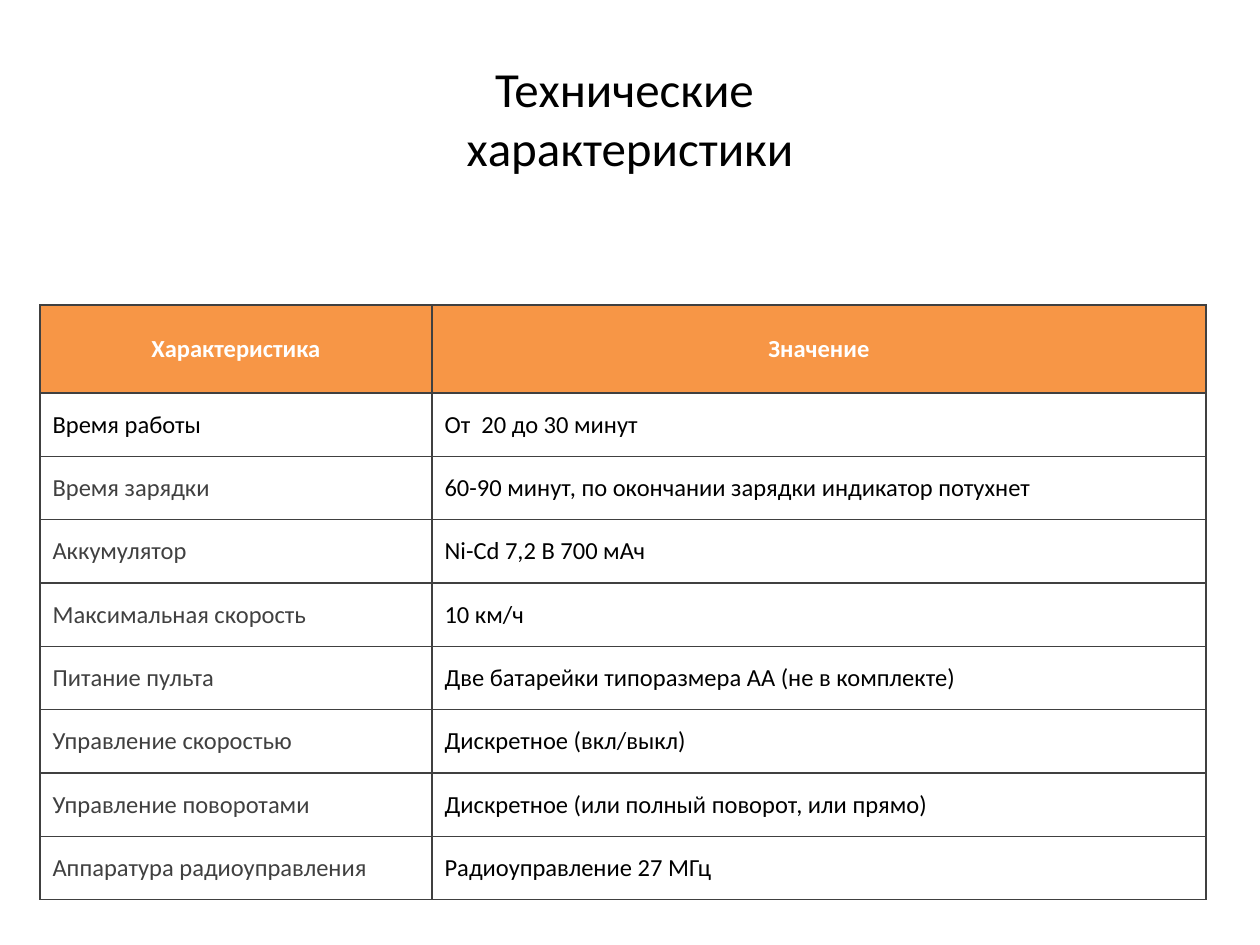
from dataclasses import dataclass

from lxml import etree
from pptx import Presentation
from pptx.dml.color import RGBColor
from pptx.enum.text import MSO_ANCHOR as ANCHOR, PP_ALIGN as ALIGN
from pptx.oxml.ns import qn
from pptx.util import Emu, Pt


@dataclass(frozen=True)
class Theme:
    """Colours, font and type sizes of the slide."""
    font: str = "Calibri"
    black: str = "000000"
    grey: str = "404040"
    white: str = "FFFFFF"
    orange: str = "F79646"
    title_size: int = 28
    table_size: int = 14
    border: int = 1


THEME = Theme()
HEADER = ("Характеристика", "Значение")
SPECS = (
    ("Время работы", "От  20 до 30 минут"),
    ("Время зарядки", "60-90 минут, по окончании зарядки индикатор потухнет"),
    ("Аккумулятор", "Ni-Cd 7,2 В 700 мАч"),
    ("Максимальная скорость", "10 км/ч"),
    ("Питание пульта", "Две батарейки типоразмера АА (не в комплекте)"),
    ("Управление скоростью", "Дискретное (вкл/выкл)"),
    ("Управление поворотами", "Дискретное (или полный поворот, или прямо)"),
    ("Аппаратура радиоуправления", "Радиоуправление 27 МГц"),
)


def px(n):
    """Convert pixels at 126 to the inch into EMU."""
    return Emu(round(n * 914400 / 126))


def write(tf, text, size, color, align=ALIGN.LEFT, bold=False):
    """Put one styled paragraph into a text frame."""
    p = tf.paragraphs[0]
    p.text = text
    p.alignment = align
    p.font.name = THEME.font
    p.font.size = Pt(size)
    p.font.bold = bold
    p.font.color.rgb = RGBColor.from_string(color)


def add_title(s, text, x, y, w, h):
    """Add the centred slide title."""
    tf = s.shapes.add_textbox(px(x), px(y), px(w), px(h)).text_frame
    tf.word_wrap = True
    tf.vertical_anchor = ANCHOR.MIDDLE
    write(tf, text, THEME.title_size, THEME.black, ALIGN.CENTER)


def add_borders(cell):
    """Draw a thin line on all four sides of a cell."""
    tc_pr = cell._tc.get_or_add_tcPr()
    for i, side in enumerate(("a:lnL", "a:lnR", "a:lnT", "a:lnB")):
        ln = etree.Element(qn(side), w=str(Pt(THEME.border)))
        fill = etree.SubElement(ln, qn("a:solidFill"))
        etree.SubElement(fill, qn("a:srgbClr"), val=THEME.grey)
        tc_pr.insert(i, ln)


def fill_cell(cell, text, fill, color, **style):
    """Fill, frame and label one table cell."""
    cell.fill.solid()
    cell.fill.fore_color.rgb = RGBColor.from_string(fill)
    cell.vertical_anchor = ANCHOR.MIDDLE
    write(cell.text_frame, text, THEME.table_size, color, **style)
    add_borders(cell)


def add_specs(s, x, y, widths, head_h, body_h):
    """Add the table with a header row and equal body rows."""
    table = s.shapes.add_table(len(SPECS) + 1, len(widths), px(x), px(y),
                               px(sum(widths)), px(head_h + body_h)).table
    for col, w in zip(table.columns, widths):
        col.width = px(w)
    for row in table.rows:
        row.height = px(body_h) // len(SPECS)
    table.rows[0].height = px(head_h)
    for c, text in enumerate(HEADER):
        fill_cell(table.cell(0, c), text, THEME.orange, THEME.white,
                  align=ALIGN.CENTER, bold=True)
    for r, (name, value) in enumerate(SPECS, 1):
        name_color = THEME.black if r == 1 else THEME.grey
        fill_cell(table.cell(r, 0), name, THEME.white, name_color)
        fill_cell(table.cell(r, 1), value, THEME.white, THEME.black)


def main():
    """Build and save the slide."""
    prs = Presentation()
    prs.slide_width, prs.slide_height = px(1260), px(945)
    s = prs.slides.add_slide(prs.slide_layouts[6])
    add_title(s, "Технические \vхарактеристики", 63, 38, 1134, 158)
    add_specs(s, 40, 305, (392, 774), 88, 507)
    prs.save("out.pptx")


if __name__ == "__main__":
    main()
